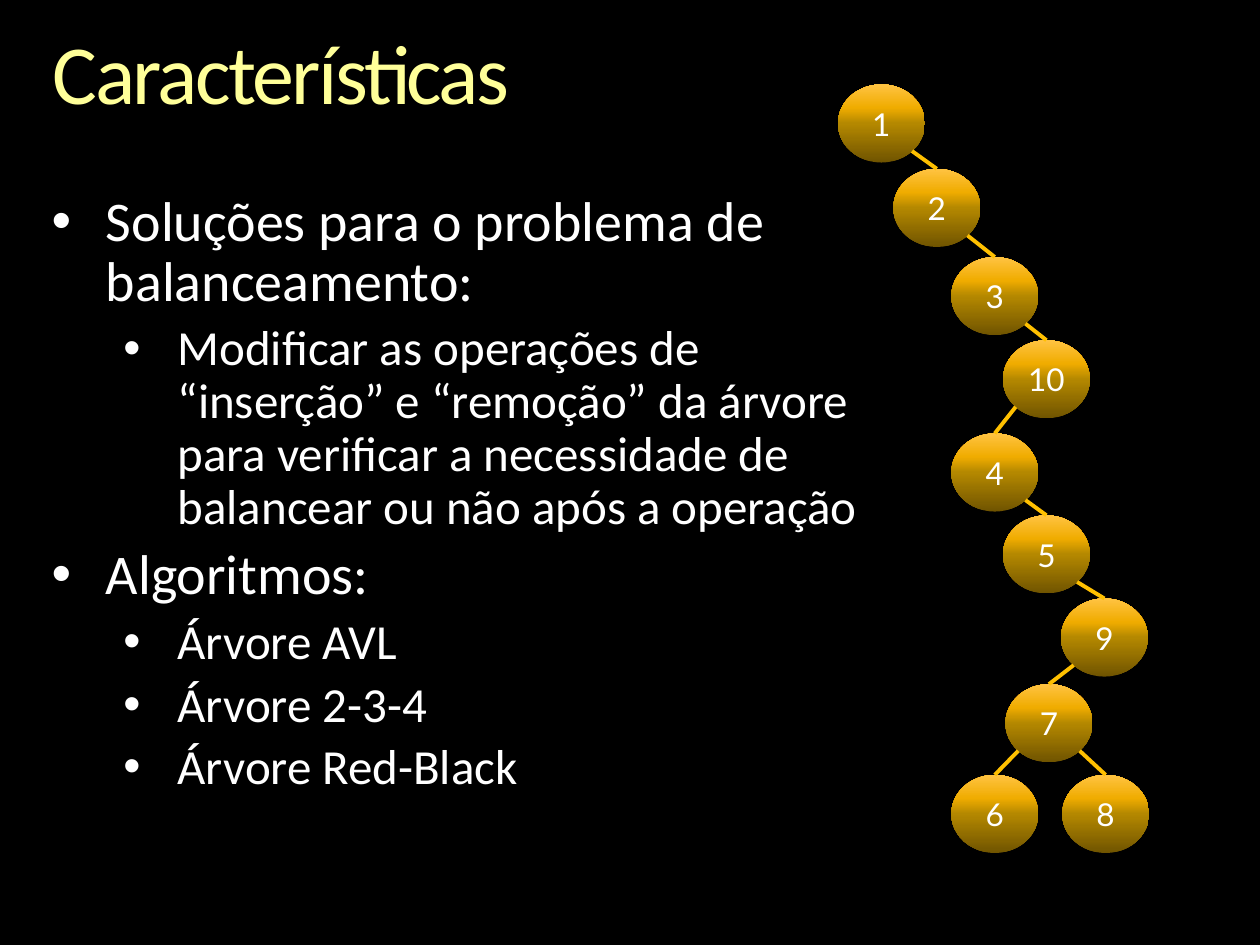
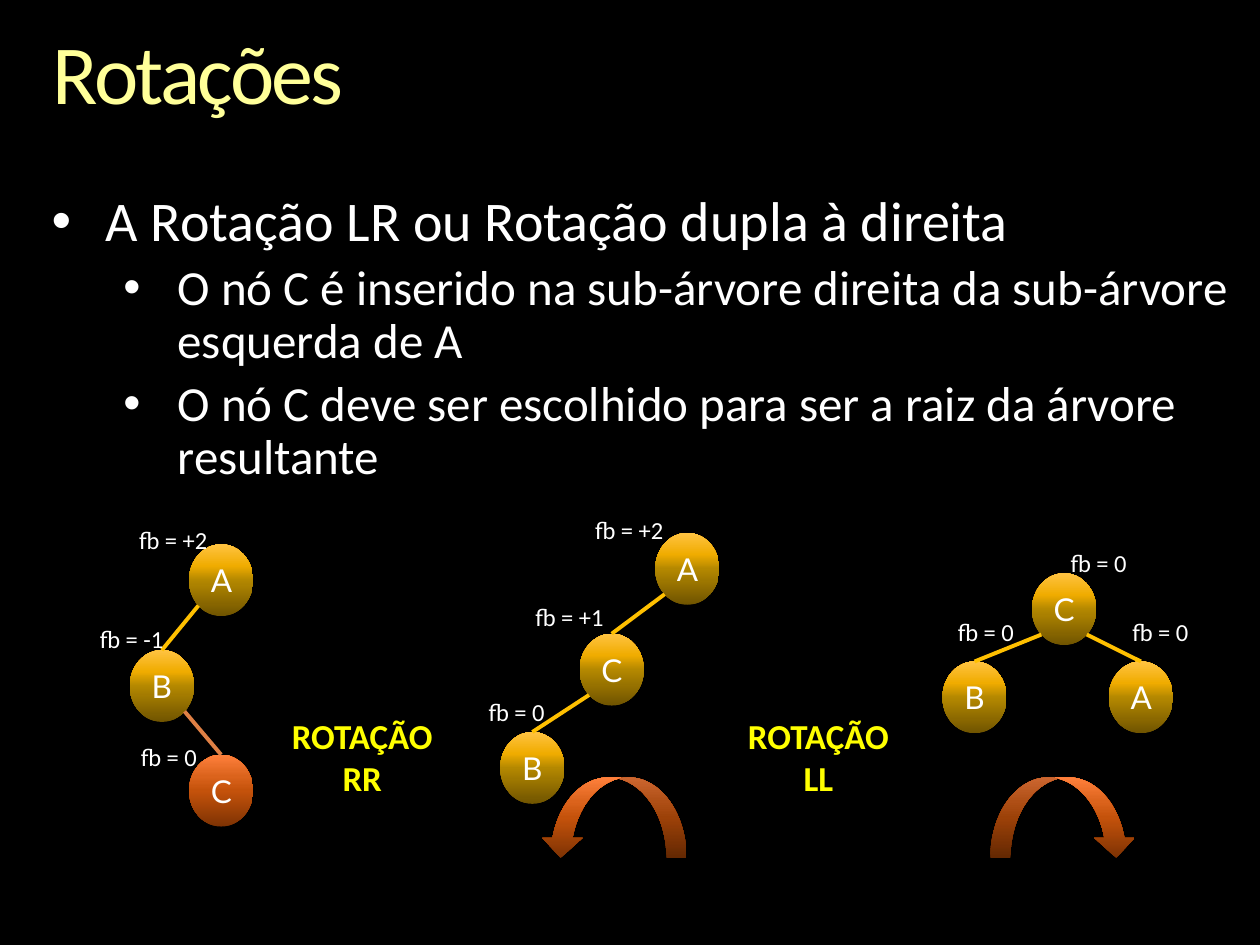
"""Build two slides on balancing binary trees and double rotations."""
import math

from lxml import etree
from pptx import Presentation
from pptx import util as u
from pptx.dml.color import RGBColor
from pptx.enum import shapes, text
from pptx.oxml.ns import qn

COLORS = {
    "background": "000000",
    "title": "FFFF99",
    "text": "FFFFFF",
    "rotation": "FFFF00",
    "gold": "FFC000",
    "orange": "DF8045",
}
GRADIENTS = {
    "gold": ((0, "705400"), (50, "B48800"), (70, "F0AC00"), (100, "FFC342")),
    "orange": ((0, "7D3203"), (50, "C4520B"), (70, "DB631C"), (100, "FF803C")),
}
BODY_LEVELS = ((0.43, 32), (1, 28))
HANGING = 0.43


def rgb(name):
    """Return the named colour."""
    return RGBColor.from_string(COLORS[name])


def write(p, content, size, color="text", font="Calibri", bold=False, align=None, spacing=None):
    """Add a formatted run to a paragraph."""
    if align is not None:
        p.alignment = align
    r = p.add_run()
    r.text = content
    r.font.size = u.Pt(size)
    r.font.name = font
    r.font.bold = bold
    r.font.color.rgb = rgb(color)
    if spacing is not None:
        r.font._element.set("spc", str(round(spacing * 100)))


def place(sp, x, y, w, h):
    """Move and size a shape, in inches."""
    sp.left, sp.top, sp.width, sp.height = map(u.Inches, (x, y, w, h))


def clear_margins(tf):
    """Wrap a text frame and remove its insets."""
    tf.word_wrap = True
    tf.vertical_anchor = text.MSO_ANCHOR.TOP
    tf.auto_size = text.MSO_AUTO_SIZE.SHAPE_TO_FIT_TEXT
    tf.margin_left = tf.margin_top = tf.margin_right = tf.margin_bottom = 0


def add_slide(prs, title):
    """Add a title-only slide with the shared title style."""
    s = prs.slides.add_slide(prs.slide_layouts[5])
    sp = s.shapes.title
    place(sp, 0.42, 0.25, 9.17, 0.73)
    clear_margins(sp.text_frame)
    p = sp.text_frame.paragraphs[0]
    p.line_spacing = 0.9
    write(p, title, 48, color="title", align=text.PP_ALIGN.LEFT, spacing=-1.5)
    return s


def add_bullet(p, indent):
    """Give a paragraph a hanging round bullet."""
    pPr = p._p.get_or_add_pPr()
    pPr.set("marL", str(u.Inches(indent)))
    pPr.set("indent", str(-u.Inches(HANGING)))
    etree.SubElement(pPr, qn("a:buFont")).set("typeface", "Arial")
    etree.SubElement(pPr, qn("a:buChar")).set("char", "•")


def add_body(s, width, height, items):
    """Add the bulleted body from (level, text) items."""
    tf = s.shapes.add_textbox(*map(u.Inches, (0.41, 1.53, width, height))).text_frame
    clear_margins(tf)
    for i, (level, content) in enumerate(items):
        indent, size = BODY_LEVELS[level]
        p = tf.add_paragraph() if i else tf.paragraphs[0]
        p.level = level
        add_bullet(p, indent)
        p.line_spacing = 0.9
        p.space_before = u.Pt(0.2 * size if i else 0)
        write(p, content, size)


def add_label(parent, content, x, y, w, h=0.34, size=14, **style):
    """Add a centred text box."""
    tf = parent.shapes.add_textbox(*map(u.Inches, (x, y, w, h))).text_frame
    tf.word_wrap = True
    tf.auto_size = text.MSO_AUTO_SIZE.SHAPE_TO_FIT_TEXT
    write(tf.paragraphs[0], content, size, align=text.PP_ALIGN.CENTER, **style)


def add_glossy(parent, kind, x, y, w, h, tone):
    """Add a borderless shape with a bottom-to-top gradient."""
    sp = parent.shapes.add_shape(kind, *map(u.Inches, (x, y, w, h)))
    sp.shadow.inherit = False
    sp.line.fill.background()
    sp.fill.gradient()
    sp.fill.gradient_angle = 90
    stops = sp._element.spPr.find(qn("a:gradFill")).find(qn("a:gsLst"))
    for stop in list(stops):
        stops.remove(stop)
    for percent, color in GRADIENTS[tone]:
        stop = etree.SubElement(stops, qn("a:gs"), pos=str(percent * 1000))
        etree.SubElement(stop, qn("a:srgbClr"), val=color)
    return sp


def add_node(parent, label, x, y, size, tone):
    """Add a tree node with its label."""
    sp = add_glossy(parent, shapes.MSO_SHAPE.OVAL, x, y, *size, tone)
    tf = sp.text_frame
    tf.vertical_anchor = text.MSO_ANCHOR.MIDDLE
    write(tf.paragraphs[0], label, 18, font="Lato", align=text.PP_ALIGN.CENTER)
    return sp


def add_edge(group, upper, lower, tone):
    """Join the lower diagonal of a node to the top of its child."""
    side = 1 if lower.left > upper.left else -1
    reach = math.sqrt(0.5)
    x = round(upper.left + upper.width / 2 * (1 + side * reach))
    y = round(upper.top + upper.height / 2 * (1 + reach))
    line = group.shapes.add_connector(
        shapes.MSO_CONNECTOR.STRAIGHT, x, y, lower.left + lower.width // 2, lower.top)
    line.end_connect(lower, 0)
    line.line.color.rgb = rgb(tone)
    line.line.width = u.Pt(2.25)
    etree.SubElement(line._element.spPr, qn("a:effectLst"))


def add_tree(s, size, nodes, labels=(), inserted=None):
    """Add a grouped tree from (label, x, y, parent) nodes, parents first."""
    group = s.shapes.add_group_shape()
    drawn = {}
    for label, x, y, parent in nodes:
        tone = "orange" if label == inserted else "gold"
        drawn[label] = add_node(group, label, x, y, size, tone)
        if parent:
            add_edge(group, drawn[parent], drawn[label], tone)
    for label in labels:
        add_label(group, *label)


def add_turn(s, x, flipped=False):
    """Add a curved rotation arrow."""
    sp = add_glossy(s, shapes.MSO_SHAPE.CURVED_DOWN_ARROW, x, 6.17, 1.16, 0.64, "orange")
    if flipped:
        sp._element.spPr.find(qn("a:xfrm")).set("flipH", "1")


def build_features(prs):
    """Build the slide on balancing solutions."""
    s = add_slide(prs, "Características")
    add_body(s, 6.48, 4.91, (
        (0, "Soluções para o problema de balanceamento:"),
        (1, "Modificar as operações de “inserção” e “remoção” da árvore para "
            "verificar a necessidade de balancear ou não após a operação"),
        (0, "Algoritmos:"),
        (1, "Árvore AVL"),
        (1, "Árvore 2-3-4"),
        (1, "Árvore Red-Black"),
    ))
    add_tree(s, (0.69, 0.62), (
        ("1", 6.65, 0.67, None),
        ("2", 7.09, 1.34, "1"),
        ("3", 7.55, 2.04, "2"),
        ("10", 7.96, 2.7, "3"),
        ("4", 7.55, 3.44, "10"),
        ("5", 7.96, 4.09, "4"),
        ("9", 8.42, 4.75, "5"),
        ("7", 7.98, 5.43, "9"),
        ("6", 7.55, 6.15, "7"),
        ("8", 8.43, 6.15, "7"),
    ))


def build_rotations(prs):
    """Build the slide on the double right rotation."""
    s = add_slide(prs, "Rotações")
    add_body(s, 9.39, 2.37, (
        (0, "A Rotação LR ou Rotação dupla à direita"),
        (1, "O nó C é inserido na sub-árvore direita da sub-árvore esquerda de A"),
        (1, "O nó C deve ser escolhido para ser a raiz da árvore resultante"),
    ))
    size = (0.51, 0.57)
    add_tree(s, size,
             (("A", 1.5, 4.32, None), ("B", 1.03, 5.16, "A"), ("C", 1.5, 5.99, "B")),
             (("fb = +2", 0.89, 4.12, 0.97), ("fb = -1", 0.63, 4.9, 0.83),
              ("fb = 0", 0.98, 5.84, 0.72)),
             inserted="C")
    add_tree(s, size,
             (("A", 5.2, 4.23, None), ("C", 4.6, 5.03, "A"), ("B", 3.97, 5.81, "C")),
             (("fb = +2", 4.51, 4.04, 0.97), ("fb = +1", 4.04, 4.73, 0.96),
              ("fb = 0", 3.74, 5.48, 0.72)))
    add_tree(s, size,
             (("C", 8.19, 4.55, None), ("B", 7.48, 5.25, "C"), ("A", 8.8, 5.25, "C")),
             (("fb = 0", 7.34, 4.85, 0.97), ("fb = 0", 8.36, 4.3, 0.72),
              ("fb = 0", 8.85, 4.85, 0.72)))
    for name, x in (("RR", 2.17), ("LL", 5.79)):
        add_label(s, f"ROTAÇÃO {name}", x, 5.62, 1.41, 0.77, size=20,
                  color="rotation", bold=True)
    add_turn(s, 4.29, flipped=True)
    add_turn(s, 7.86)


def main():
    """Build and save the presentation."""
    prs = Presentation()
    prs.slide_width, prs.slide_height = u.Inches(10), u.Inches(7.5)
    fill = prs.slide_master.background.fill
    fill.solid()
    fill.fore_color.rgb = rgb("background")
    build_features(prs)
    build_rotations(prs)
    prs.save("out.pptx")


if __name__ == "__main__":
    main()
